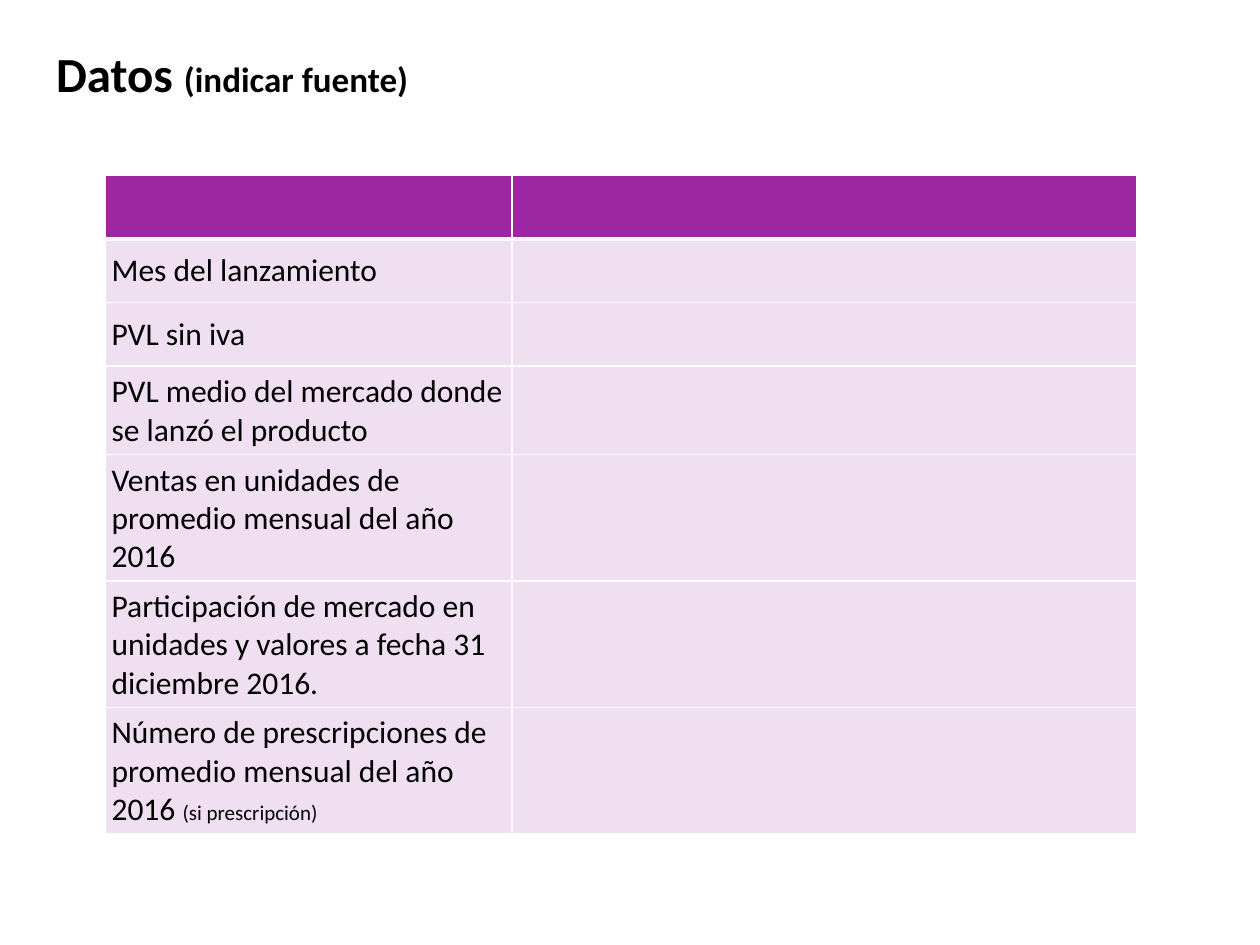
from dataclasses import dataclass

from lxml.etree import SubElement
from pptx import Presentation
from pptx.dml.color import RGBColor
from pptx.enum.text import MSO_ANCHOR, MSO_AUTO_SIZE, PP_ALIGN
from pptx.oxml import parse_xml
from pptx.oxml.ns import nsdecls, qn
from pptx.util import Cm, Pt


@dataclass(frozen=True)
class Theme:
    font: str = "Calibri"
    ink: str = "000000"
    head: str = "9D27A2"
    rule: str = "FFFFFF"
    tint: int = 15  # percent opacity of the body rows
    title: int = 28
    note: int = 20
    body: int = 18
    small: int = 12
    pad: float = 0.13  # cm


THEME = Theme()


def write(para, text, size=THEME.body, bold=False, color=THEME.ink):
    """Add one formatted run to a paragraph."""
    run = para.add_run()
    run.text = text
    font = run.font
    font.name, font.size, font.bold = THEME.font, Pt(size), bold
    font.color.rgb = RGBColor.from_string(color)


class Deck:
    """Holds the style and the current slide."""

    def __init__(self, theme):
        self.theme = theme
        self.file = Presentation()
        self.file.slide_width, self.file.slide_height = Cm(25.4), Cm(19.05)
        self.slide = self.file.slides.add_slide(self.file.slide_layouts[5])

    def title(self, text, note, left, top, width, height):
        shape = self.slide.shapes.title
        shape.left, shape.top = Cm(left), Cm(top)
        shape.width, shape.height = Cm(width), Cm(height)
        frame = shape.text_frame
        frame.word_wrap = False
        frame.auto_size = MSO_AUTO_SIZE.SHAPE_TO_FIT_TEXT
        frame.vertical_anchor = MSO_ANCHOR.TOP
        self.inset(frame)
        para = frame.paragraphs[0]
        para.alignment = PP_ALIGN.LEFT
        write(para, text, size=self.theme.title, bold=True)
        write(para, note, size=self.theme.note, bold=True)

    def table(self, labels, left, top, widths, height):
        count = len(labels) + 1
        grid = self.slide.shapes.add_table(
            count, len(widths), Cm(left), Cm(top), Cm(sum(widths)), Cm(height * count)
        ).table
        for col, width in zip(grid.columns, widths):
            col.width = Cm(width)
        for index, row in enumerate(grid.rows):
            row.height = Cm(height)
            for cell in row.cells:
                self.paint(cell, head=index == 0)
        # Labels fill the first column below the header
        for index, (text, note) in enumerate(labels, 1):
            para = grid.cell(index, 0).text_frame.paragraphs[0]
            write(para, text)
            if note:
                write(para, note, size=self.theme.small)

    def paint(self, cell, head):
        self.inset(cell)
        cell.vertical_anchor = MSO_ANCHOR.MIDDLE
        cell.fill.solid()
        cell.fill.fore_color.rgb = RGBColor.from_string(self.theme.head)
        props = cell._tc.get_or_add_tcPr()
        if not head:
            color = props.find(qn("a:solidFill"))[0]
            SubElement(color, qn("a:alpha")).set("val", str(self.theme.tint * 1000))
        # Borders come before the fill
        for place, side in enumerate("LRTB"):
            width = Pt(3 if head and side == "B" else 1)
            props.insert(place, parse_xml(
                f'<a:ln{side} {nsdecls("a")} w="{width}"><a:solidFill>'
                f'<a:srgbClr val="{self.theme.rule}"/></a:solidFill></a:ln{side}>'
            ))

    def inset(self, item):
        item.margin_left = item.margin_right = Cm(self.theme.pad)
        item.margin_top = item.margin_bottom = Cm(self.theme.pad)


def main():
    deck = Deck(THEME)
    # Data table
    deck.table(
        [
            ("Mes del lanzamiento", ""),
            ("PVL sin iva", ""),
            ("PVL medio del mercado donde se lanzó el producto", ""),
            ("Ventas en unidades de promedio mensual del año 2016", ""),
            ("Participación de mercado en unidades y valores a fecha "
             "31 diciembre 2016.", ""),
            ("Número de prescripciones de promedio mensual del año 2016 ",
             "(si prescripción)"),
        ],
        left=2.12, top=3.54, widths=(8.2, 12.6), height=1.28,
    )
    # Heading
    deck.title("Datos ", "(indicar fuente)", left=1, top=0.74, width=8.33, height=1.37)
    deck.file.save("out.pptx")


if __name__ == "__main__":
    main()
